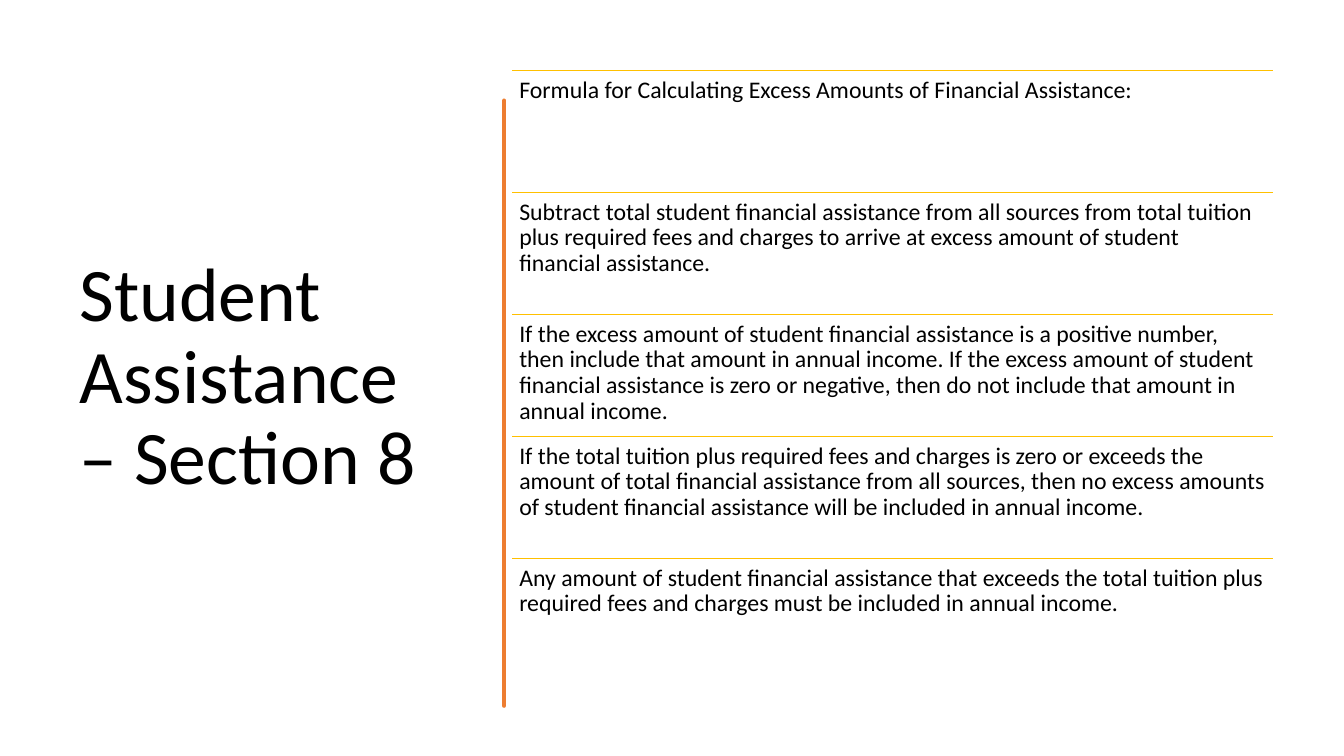
from lxml import etree
from pptx import Presentation
from pptx.dml.color import RGBColor
from pptx.enum.shapes import MSO_CONNECTOR
from pptx.enum.text import MSO_ANCHOR
from pptx.oxml.ns import qn
from pptx.util import Inches, Pt

STRAIGHT = MSO_CONNECTOR.STRAIGHT
TOP, MIDDLE = MSO_ANCHOR.TOP, MSO_ANCHOR.MIDDLE
BLACK = RGBColor(0x00, 0x00, 0x00)
ORANGE = RGBColor(0xED, 0x7D, 0x31)
GOLD = RGBColor(0xFF, 0xC0, 0x00)
FONT = "Calibri"

TOP_Y = 0.7
ROW_X, ROW_W, ROW_H = 5.08, 7.55, 1.21
ROWS = [
    "Formula for Calculating Excess Amounts of Financial Assistance:",
    "Subtract total student financial assistance from all sources from total tuition plus required fees and charges to arrive at excess amount of student financial assistance.",
    "If the excess amount of student financial assistance is a positive number, then include that amount in annual income. If the excess amount of student financial assistance is zero or negative, then do not include that amount in annual income.",
    "If the total tuition plus required fees and charges is zero or exceeds the amount of total financial assistance from all sources, then no excess amounts of student financial assistance will be included in annual income.",
    "Any amount of student financial assistance that exceeds the total tuition plus required fees and charges must be included in annual income.",
]
RIGHT_EDGE = [(4.75, 0.84), (4.76, 1.15), (4.75, 1.46), (4.75, 2.26), (4.75, 2.94),
              (4.75, 3.56), (4.76, 4.0), (4.75, 4.36), (4.74, 4.7), (4.75, 5.1),
              (4.76, 5.5), (4.75, 5.84), (4.75, 6.76)]
LEFT_EDGE = [(4.73, 6.76), (4.72, 6.45), (4.73, 6.13), (4.73, 5.57), (4.72, 5.2),
             (4.73, 4.77), (4.72, 4.45), (4.73, 4.15), (4.73, 3.35), (4.73, 2.5),
             (4.73, 1.81), (4.72, 1.7), (4.74, 1.2), (4.73, 0.84)]


def add_text(x, y, w, h, text, size, anchor, margins):
    tf = s.shapes.add_textbox(Inches(x), Inches(y), Inches(w), Inches(h)).text_frame
    tf.word_wrap = True
    tf.vertical_anchor = anchor
    tf.margin_left = tf.margin_right = Inches(margins[0])
    tf.margin_top = tf.margin_bottom = Inches(margins[1])
    p = tf.paragraphs[0]
    p.text = text
    p.line_spacing = 0.9
    p.font.name = FONT
    p.font.size = Pt(size)
    p.font.color.rgb = BLACK


prs = Presentation()
prs.slide_width, prs.slide_height = Inches(13.33), Inches(7.5)
s = prs.slides.add_slide(prs.slide_layouts[6])

add_text(0.69, TOP_Y, 3.74, 6.11, "Student Assistance – Section 8", 54, MIDDLE, (0.1, 0.05))

outline = RIGHT_EDGE + LEFT_EDGE
fb = s.shapes.build_freeform(*outline[0], scale=Inches(1))
fb.add_line_segments(outline[1:], close=True)
bar = fb.convert_to_shape()
bar.shadow.inherit = False
bar.fill.solid()
bar.fill.fore_color.rgb = ORANGE
bar.line.color.rgb = ORANGE
bar.line.width = Pt(3.25)
etree.SubElement(bar.line._get_or_add_ln(), qn("a:round"))

for i, text in enumerate(ROWS):
    y = TOP_Y + i * ROW_H
    rule = s.shapes.add_connector(STRAIGHT, Inches(ROW_X), Inches(y), Inches(ROW_X + ROW_W), Inches(y))
    rule.line.color.rgb = GOLD
    rule.line.width = Pt(1)
    etree.SubElement(rule._element.spPr, qn("a:effectLst"))
    add_text(ROW_X, y, ROW_W, ROW_H, text, 17, TOP, (0.07, 0.07))

prs.save("out.pptx")
